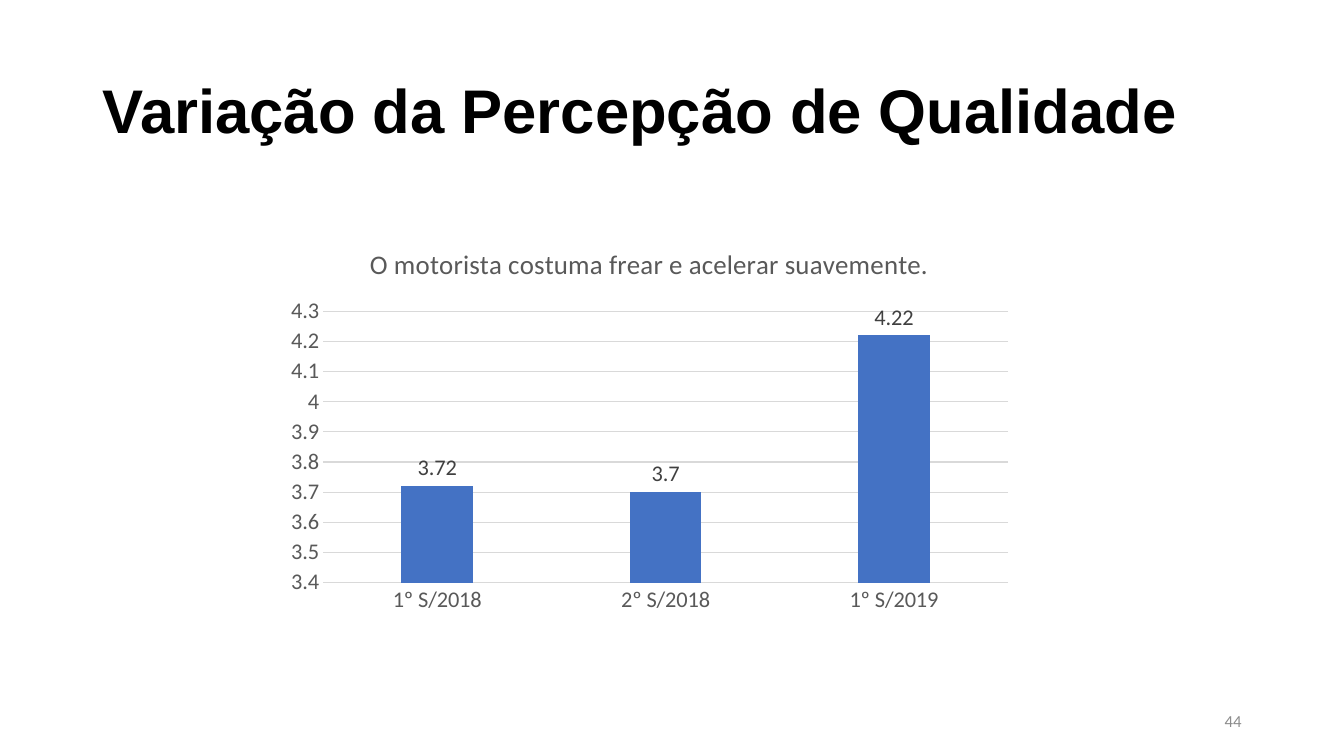
"""Build the slide on how perceived driving quality changed by semester."""
from pptx import Presentation
from pptx.chart.data import CategoryChartData
from pptx.dml.color import RGBColor
from pptx.enum.chart import XL_CHART_TYPE, XL_LABEL_POSITION, XL_TICK_MARK
from pptx.enum.text import MSO_ANCHOR, PP_ALIGN
from pptx.util import Pt

COLORS = {
    "title": "000000",
    "number": "8C8C8C",
    "axis": "595959",
    "label": "404040",
    "grid": "D9D9D9",
    "bar": "4472C4",
}
QUESTION = "O motorista costuma frear e acelerar suavemente."


def style_font(font, name, size, color, bold=False):
    font.name = name
    font.size = Pt(size)
    font.bold = bold
    font.color.rgb = RGBColor.from_string(COLORS[color])


def style_line(line):
    line.color.rgb = RGBColor.from_string(COLORS["grid"])
    line.width = Pt(0.75)


deck = Presentation()
deck.slide_width, deck.slide_height = Pt(960), Pt(540)
page = deck.slides.add_slide(deck.slide_layouts[5])

title = page.shapes.title
title.left, title.top, title.width, title.height = Pt(66), Pt(28.75), Pt(828), Pt(104.4)
title.text_frame.vertical_anchor = MSO_ANCHOR.MIDDLE
para = title.text_frame.paragraphs[0]
para.alignment = PP_ALIGN.LEFT
para.line_spacing = 0.9
span = para.add_run()
span.text = "Variação da Percepção de Qualidade"
style_font(span.font, "Arial", 44, "title", bold=True)

box = page.shapes.add_textbox(Pt(678), Pt(500.5), Pt(216), Pt(28.75))
box.text_frame.word_wrap = True
box.text_frame.vertical_anchor = MSO_ANCHOR.MIDDLE
para = box.text_frame.paragraphs[0]
para.alignment = PP_ALIGN.RIGHT
span = para.add_run()
span.text = "44"
style_font(span.font, "Calibri", 12, "number")

ratings = CategoryChartData()
ratings.categories = ["1º S/2018", "2º S/2018", "1º S/2019"]
ratings.add_series(QUESTION, [3.72, 3.7, 4.22])
chart = page.shapes.add_chart(
    XL_CHART_TYPE.COLUMN_CLUSTERED, Pt(197.3), Pt(162), Pt(533.5), Pt(282.2), ratings
).chart
style_font(chart.font, "Calibri", 16, "title")
chart.has_legend = False
chart.has_title = True
span = chart.chart_title.text_frame.paragraphs[0].add_run()
span.text = QUESTION
style_font(span.font, "Calibri", 19.2, "axis")

for axis in (chart.category_axis, chart.value_axis):
    axis.major_tick_mark = XL_TICK_MARK.NONE
    axis.minor_tick_mark = XL_TICK_MARK.NONE
    style_font(axis.tick_labels.font, "Calibri", 16, "axis")
style_line(chart.category_axis.format.line)

scale = chart.value_axis
scale.minimum_scale, scale.maximum_scale, scale.major_unit = 3.4, 4.3, 0.1
scale.tick_labels.number_format = "General"
scale.tick_labels.number_format_is_linked = False
scale.format.line.fill.background()
scale.has_major_gridlines = True
style_line(scale.major_gridlines.format.line)

plot = chart.plots[0]
plot.gap_width = 219
plot.overlap = -27
plot.vary_by_categories = False
bars = plot.series[0]
bars.format.fill.solid()
bars.format.fill.fore_color.rgb = RGBColor.from_string(COLORS["bar"])
labels = bars.data_labels
labels.show_value = True
labels.position = XL_LABEL_POSITION.OUTSIDE_END
style_font(labels.font, "Calibri", 16, "label")

deck.save("out.pptx")
